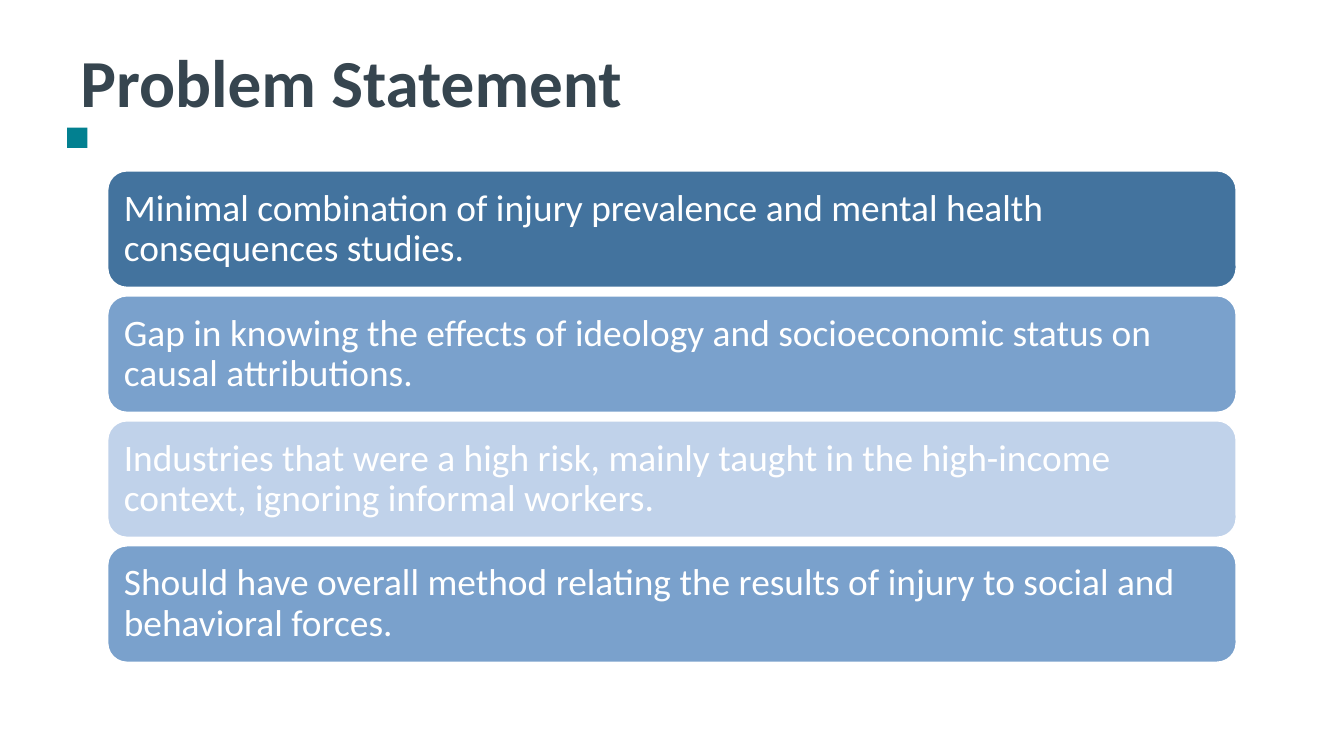
from pptx import Presentation
from pptx.dml.color import RGBColor
from pptx.enum.shapes import MSO_SHAPE as Shape
from pptx.enum.text import MSO_ANCHOR as Anchor, PP_ALIGN as Align
from pptx.util import Inches, Pt

WHITE = RGBColor(0xFF, 0xFF, 0xFF)
CHARCOAL = RGBColor(0x36, 0x45, 0x4F)
TEAL = RGBColor(0x02, 0x80, 0x90)
DARK_BLUE = RGBColor(0x43, 0x73, 0x9E)
MID_BLUE = RGBColor(0x7A, 0xA1, 0xCC)
PALE_BLUE = RGBColor(0xC0, 0xD2, 0xEA)

TITLE_FONT = {"name": "Calibri", "size": Pt(36), "bold": True}
CARD_FONT = {"name": "Calibri", "size": Pt(20), "bold": False}

PROBLEMS = [
    ("Minimal combination of injury prevalence and mental health consequences studies.", DARK_BLUE),
    ("Gap in knowing the effects of ideology and socioeconomic status on causal attributions.", MID_BLUE),
    ("Industries that were a high risk, mainly taught in the high-income context, "
     "ignoring informal workers.", PALE_BLUE),
    ("Should have overall method relating the results of injury to social and behavioral forces.", MID_BLUE),
]


def write_text(shape, text, font_values, color):
    frame = shape.text_frame
    frame.word_wrap = True
    frame.vertical_anchor = Anchor.MIDDLE
    paragraph = frame.paragraphs[0]
    paragraph.alignment = Align.LEFT
    run = paragraph.add_run()
    run.text = text
    for name, value in font_values.items():
        setattr(run.font, name, value)
    run.font.color.rgb = color
    return frame


def add_filled_shape(slide, kind, box, color):
    shape = slide.shapes.add_shape(kind, *map(Inches, box))
    shape.shadow.inherit = False
    shape.fill.solid()
    shape.fill.fore_color.rgb = color
    shape.line.fill.background()
    return shape


def add_header(slide, left, top, width, height):
    """Title with a small square marker below its left edge."""
    marker, gap = 0.15, 0.05
    title = slide.shapes.add_textbox(*map(Inches, (left, top, width, height)))
    write_text(title, "Problem Statement", TITLE_FONT, CHARCOAL)
    add_filled_shape(slide, Shape.RECTANGLE, (left, top + height + gap, marker, marker), TEAL)


def add_problem_list(slide, left, top, width, height, gap=0.06):
    """Equal rounded cards stacked from top to bottom."""
    card_height = (height - gap * (len(PROBLEMS) - 1)) / len(PROBLEMS)
    for row, (text, color) in enumerate(PROBLEMS):
        card_top = top + row * (card_height + gap)
        card = add_filled_shape(slide, Shape.ROUNDED_RECTANGLE,
                                (left, card_top, width, card_height), color)
        card.line.color.rgb = WHITE
        card.line.width = Pt(1)
        frame = write_text(card, text, CARD_FONT, WHITE)
        frame.paragraphs[0].line_spacing = 0.9
        for side in ("left", "top", "right", "bottom"):
            setattr(frame, f"margin_{side}", Inches(0.08))


def main():
    presentation = Presentation()
    # Widescreen, 16:9
    presentation.slide_width = Inches(10)
    presentation.slide_height = presentation.slide_width * 9 // 16
    slide = presentation.slides.add_slide(presentation.slide_layouts[6])
    slide.background.fill.solid()
    slide.background.fill.fore_color.rgb = WHITE

    add_header(slide, 0.5, 0.3, 9, 0.6)
    add_problem_list(slide, 0.8, 1.27, 8.4, 3.66)
    presentation.save("out.pptx")


if __name__ == "__main__":
    main()
